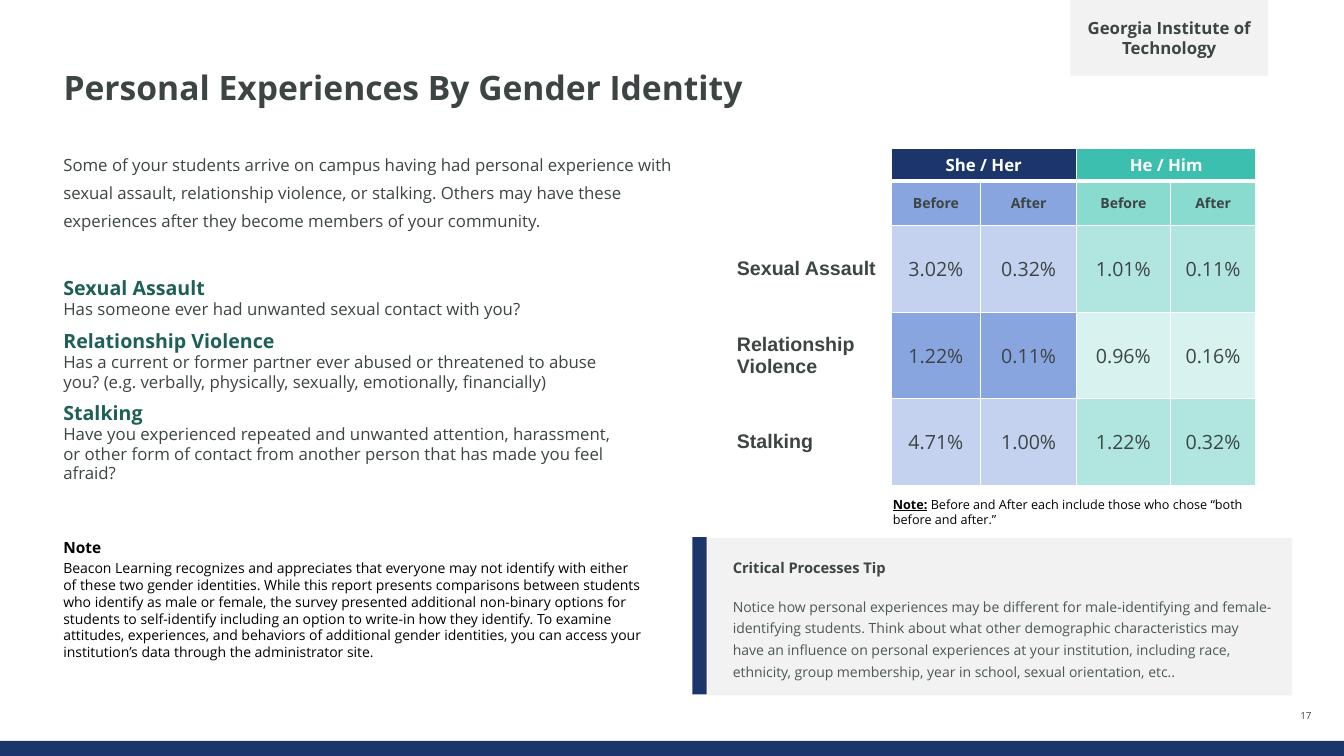
from dataclasses import dataclass

from lxml.etree import SubElement
from pptx import Presentation
from pptx.dml.color import RGBColor
from pptx.enum.shapes import MSO_SHAPE
from pptx.enum.text import MSO_ANCHOR, MSO_AUTO_SIZE, PP_ALIGN
from pptx.oxml.ns import qn
from pptx.util import Inches, Pt


@dataclass(frozen=True)
class TextStyle:
    size: float
    color: str
    bold: bool = False
    font: str = "Open Sans"
    underline: bool = False


class Theme:
    white, black, navy, panel = "FFFFFF", "000000", "1C366B", "F2F2F2"
    blue, light_blue = "88A5E0", "C4D2EF"
    teal, mid_teal, light_teal, pale_teal = "3CBFAE", "89DACF", "B0E6DF", "D8F3EF"
    ink, green = "3C4543", "1E6057"
    title = TextStyle(24, ink, True)
    school = TextStyle(12, "3D4543", True)
    body = TextStyle(12, ink)
    topic = TextStyle(14, green, True)
    note_heading = TextStyle(11, black, True)
    note = TextStyle(10, black)
    small_label = TextStyle(9, black, True, underline=True)
    small = TextStyle(9, black)
    tip_heading = TextStyle(10.5, ink, True)
    tip = TextStyle(10, "4C5758")
    page = TextStyle(7, ink)
    group = TextStyle(12, white, True)
    period = TextStyle(10, ink, True)
    row_label = TextStyle(14, ink, True, "Arial")
    value = TextStyle(14, ink)


class SlideBuilder:
    """Places elements on a grid of 160 columns by 90 rows."""

    def __init__(self, presentation, theme):
        self.theme = theme
        self.column = presentation.slide_width / 160
        self.row = presentation.slide_height / 90
        self.slide = presentation.slides.add_slide(presentation.slide_layouts[5])

    def place(self, left, top, width, height):
        return (round(left * self.column), round(top * self.row),
                round(width * self.column), round(height * self.row))

    def style(self, font, style):
        font.name, font.size = style.font, Pt(style.size)
        font.bold, font.underline = style.bold, style.underline
        font.color.rgb = RGBColor.from_string(style.color)

    def fill_text(self, frame, paragraphs, align=PP_ALIGN.LEFT, spacing=None,
                  before=0, after=0, anchor=MSO_ANCHOR.TOP, margins=None):
        """Each paragraph is a list of (text, style) runs."""
        frame.word_wrap = True
        frame.auto_size = MSO_AUTO_SIZE.NONE
        frame.vertical_anchor = anchor
        if margins:
            (frame.margin_left, frame.margin_top,
             frame.margin_right, frame.margin_bottom) = map(Inches, margins)
        for index, runs in enumerate(paragraphs):
            paragraph = frame.add_paragraph() if index else frame.paragraphs[0]
            paragraph.alignment = align
            paragraph.line_spacing = spacing
            paragraph.space_before = Pt(before if index else 0)
            paragraph.space_after = Pt(after)
            if len(runs) == 1:
                paragraph.text = runs[0][0]
                self.style(paragraph.font, runs[0][1])
                continue
            for text, style in runs:
                if text == "\n":
                    paragraph.add_line_break()
                    continue
                run = paragraph.add_run()
                run.text = text
                self.style(run.font, style)

    def title(self, area, text):
        shape = self.slide.shapes.title
        shape.left, shape.top, shape.width, shape.height = self.place(*area)
        self.fill_text(shape.text_frame, [[(text, self.theme.title)]],
                       spacing=0.9, margins=(0, 0, 0, 0))

    def text(self, area, paragraphs, **layout):
        shape = self.slide.shapes.add_textbox(*self.place(*area))
        self.fill_text(shape.text_frame, paragraphs, **layout)

    def panel(self, area, color, paragraphs=(), **layout):
        shape = self.slide.shapes.add_shape(MSO_SHAPE.RECTANGLE, *self.place(*area))
        shape.shadow.inherit = False
        shape.fill.solid()
        shape.fill.fore_color.rgb = RGBColor.from_string(color)
        shape.line.fill.background()
        if paragraphs:
            self.fill_text(shape.text_frame, paragraphs, **layout)

    def table(self, left, top, columns, rows):
        area = self.place(left, top, sum(columns), sum(rows))
        table = self.slide.shapes.add_table(len(rows), len(columns), *area).table
        table.first_row = table.horz_banding = False
        for column, width in zip(table.columns, columns):
            column.width = round(width * self.column)
        for row, height in zip(table.rows, rows):
            row.height = round(height * self.row)
        return table

    def cell(self, cell, color, text="", style=None, align=PP_ALIGN.CENTER, bottom=1):
        properties = cell._tc.get_or_add_tcPr()
        for side, width in (("L", 1), ("R", 1), ("T", 1), ("B", bottom)):
            line = SubElement(properties, qn(f"a:ln{side}"), w=str(Pt(width)))
            fill = SubElement(line, qn("a:solidFill"))
            SubElement(fill, qn("a:srgbClr"), val=self.theme.white)
        cell.fill.solid()
        cell.fill.fore_color.rgb = RGBColor.from_string(color)
        cell.vertical_anchor = MSO_ANCHOR.MIDDLE
        if text:
            paragraph = cell.text_frame.paragraphs[0]
            paragraph.text, paragraph.alignment = text, align
            self.style(paragraph.font, style)


def add_results(builder):
    theme = builder.theme
    table = builder.table(86.52, 17.64, (19.56, 10.68, 11.4, 11.16, 10.2),
                          (3.84, 5.28, 10.32, 10.32, 10.32))

    # Header rows
    builder.cell(table.cell(0, 0), theme.white, bottom=3)
    builder.cell(table.cell(1, 0), theme.white)
    table.cell(0, 0).merge(table.cell(1, 0))
    groups = (("She / Her", theme.navy, theme.blue),
              ("He / Him", theme.teal, theme.mid_teal))
    for first, (group, group_color, period_color) in zip((1, 3), groups):
        builder.cell(table.cell(0, first), group_color, group, theme.group, bottom=3)
        builder.cell(table.cell(0, first + 1), group_color, bottom=3)
        table.cell(0, first).merge(table.cell(0, first + 1))
        for offset, period in enumerate(("Before", "After")):
            builder.cell(table.cell(1, first + offset), period_color, period, theme.period)

    # Values
    results = (("Sexual Assault", "3.02%", "0.32%", "1.01%", "0.11%"),
               ("Relationship Violence", "1.22%", "0.11%", "0.96%", "0.16%"),
               ("Stalking", "4.71%", "1.00%", "1.22%", "0.32%"))
    bands = ((theme.light_blue, theme.light_teal), (theme.blue, theme.pale_teal))
    for index, (label, *values) in enumerate(results):
        row = index + 2
        builder.cell(table.cell(row, 0), theme.white, label, theme.row_label, PP_ALIGN.LEFT)
        for column, value in enumerate(values):
            color = bands[index % 2][column // 2]
            builder.cell(table.cell(row, column + 1), color, value, theme.value)


def main():
    presentation = Presentation()
    presentation.slide_width, presentation.slide_height = Inches(13.33), Inches(7.5)
    theme = Theme()
    builder = SlideBuilder(presentation, theme)

    # Frame: footer bar, title, page number
    builder.panel((0, 88.2, 160, 1.8), theme.navy)
    builder.title((7.56, 8.52, 142, 8.4), "Personal Experiences By Gender Identity")
    builder.text((152.4, 84.12, 6.12, 1.8), [[("17", theme.page)]], align=PP_ALIGN.CENTER,
                 anchor=MSO_ANCHOR.BOTTOM, margins=(0, 0, 0, 0))

    add_results(builder)

    # Introduction and survey questions
    builder.text((6.36, 16.92, 78, 11.76), [[(
        "Some of your students arrive on campus having had personal experience with sexual "
        "assault, relationship violence, or stalking. Others may have these experiences "
        "after they become members of your community.", theme.body)]],
        spacing=Pt(20), after=2)
    topics = (
        ("Sexual Assault", "Has someone ever had unwanted sexual contact with you?"),
        ("Relationship Violence",
         "Has a current or former partner ever abused or threatened to abuse you? "
         "(e.g. verbally, physically, sexually, emotionally, financially)"),
        ("Stalking",
         "Have you experienced repeated and unwanted attention, harassment, or other form "
         "of contact from another person that has made you feel afraid?"))
    builder.text((6.36, 32.76, 69.12, 28.56),
                 [[(topic, theme.topic), ("\n", None), (question, theme.body)]
                  for topic, question in topics],
                 spacing=Pt(14), before=7.5, after=2)

    # School name
    builder.panel((127.44, 0, 23.52, 9), theme.panel,
                  [[("Georgia Institute of Technology", theme.school)]],
                  align=PP_ALIGN.CENTER, anchor=MSO_ANCHOR.MIDDLE, margins=(0.1, 0, 0.1, 0))

    # Notes
    builder.text((105.12, 58.56, 44.52, 4.8), [[
        ("Note:", theme.small_label),
        (" Before and After each include those who chose “both before and after.”",
         theme.small)]])
    builder.text((6.36, 63.48, 71.28, 15.96), [[("Note", theme.note_heading)], [(
        "Beacon Learning recognizes and appreciates that everyone may not identify with "
        "either of these two gender identities. While this report presents comparisons "
        "between students who identify as male or female, the survey presented additional "
        "non-binary options for students to self-identify including an option to write-in "
        "how they identify. To examine attitudes, experiences, and behaviors of additional "
        "gender identities, you can access your institution’s data through the "
        "administrator site.", theme.note)]],
        spacing=Pt(12), after=2, anchor=MSO_ANCHOR.MIDDLE)

    # Tip
    builder.panel((82.44, 63.96, 1.68, 18.72), theme.navy)
    builder.panel((84.24, 64.08, 69.6, 18.72), theme.panel, [
        [("Critical Processes Tip", theme.tip_heading)],
        [("Notice how personal experiences may be different for male-identifying and "
          "female-identifying students. Think about what other demographic characteristics "
          "may have an influence on personal experiences at your institution, including "
          "race, ethnicity, group membership, year in school, sexual orientation, etc..",
          theme.tip)]],
        spacing=1.3, before=12, anchor=MSO_ANCHOR.MIDDLE, margins=(0.25, 0, 0.2, 0))

    presentation.save("out.pptx")


if __name__ == "__main__":
    main()
